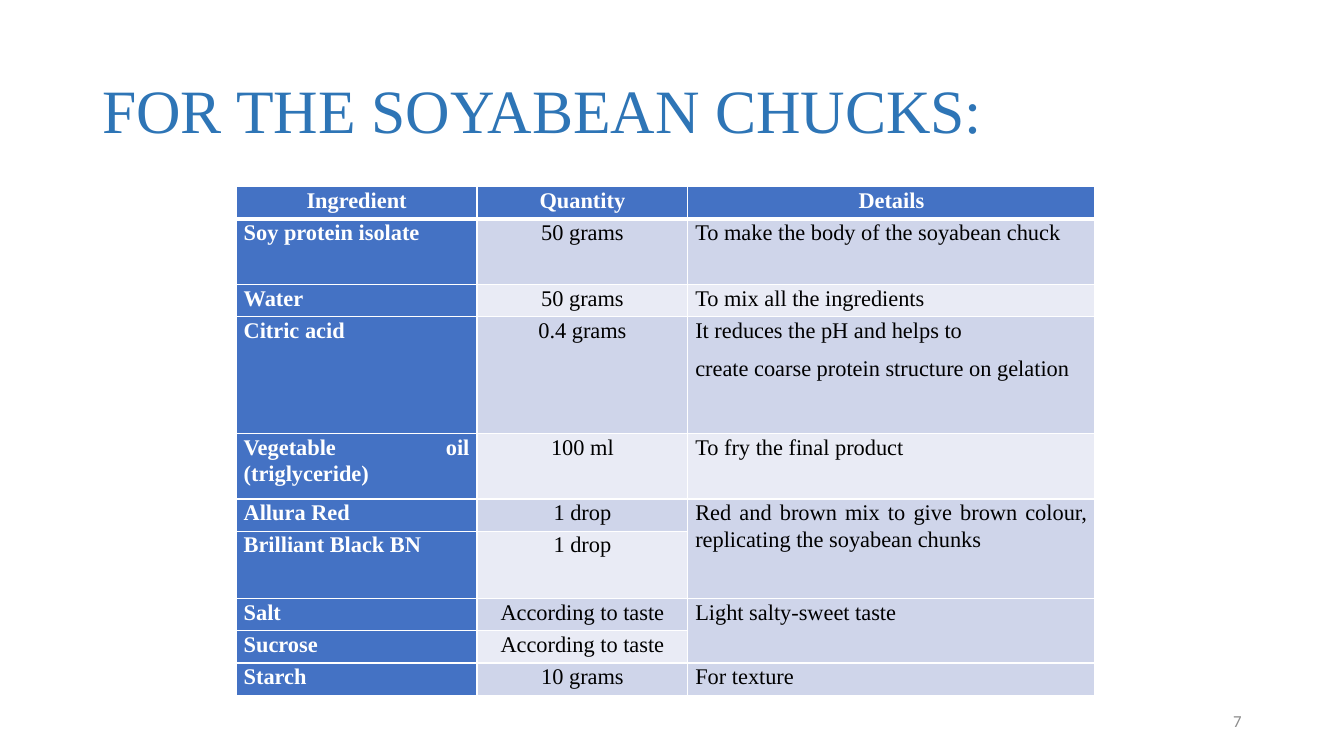
"""Build the soyabean chunk ingredients slide."""
from dataclasses import dataclass

from lxml import etree
from pptx import Presentation
from pptx.dml.color import RGBColor
from pptx.enum.text import MSO_ANCHOR, PP_ALIGN
from pptx.oxml.ns import qn
from pptx.util import Pt

LEFT, CENTER, RIGHT, JUSTIFY = PP_ALIGN.LEFT, PP_ALIGN.CENTER, PP_ALIGN.RIGHT, PP_ALIGN.JUSTIFY
MIDDLE = MSO_ANCHOR.MIDDLE
SERIF, SANS = "Times New Roman", "Calibri"
COLORS = {
    "title": "2E75B6", "number": "8C8C8C", "head": "4472C4",
    "odd": "CFD5EA", "even": "E9EBF5", "white": "FFFFFF", "black": "000000",
}
COLUMN_WIDTHS = (172.1, 150.5, 290.9)


@dataclass
class Label:
    text: str
    box: tuple[float, float, float, float]
    font: str
    size: float
    color: str
    align: PP_ALIGN
    line_spacing: float = 1.0


@dataclass
class Row:
    ingredient: str
    quantity: str
    details: str
    height: float = 23
    detail_rows: int = 1


LABELS = (
    Label("FOR THE SOYABEAN CHUCKS:", (66, 28.8, 828, 104.4), SERIF, 44, "title", LEFT, 0.9),
    Label("7", (678, 500.4, 216, 28.8), SANS, 12, "number", RIGHT),
)
ROWS = (
    Row("Ingredient", "Quantity", "Details"),
    Row("Soy protein isolate", "50 grams", "To make the body of the soyabean chuck", 46.8),
    Row("Water", "50 grams", "To mix all the ingredients"),
    Row("Citric acid", "0.4 grams",
        "It reduces the pH and helps to\ncreate coarse protein structure on gelation", 83.5),
    Row("Vegetable oil (triglyceride)", "100 ml", "To fry the final product", 46.8),
    Row("Allura Red", "1 drop",
        "Red and brown mix to give brown colour, replicating the soyabean chunks", 23, 2),
    Row("Brilliant Black BN", "1 drop", "", 48.2),
    Row("Salt", "According to taste", "Light salty-sweet taste", 23, 2),
    Row("Sucrose", "According to taste", ""),
    Row("Starch", "10 grams", "For texture"),
)


def rgb(name: str) -> RGBColor:
    """Return a named colour."""
    return RGBColor.from_string(COLORS[name])


def style(p, font: str, size: float, color: str, align: PP_ALIGN, spacing: float) -> None:
    """Set the font, alignment and line spacing of a paragraph."""
    p.font.name, p.font.size = font, Pt(size)
    p.font.color.rgb = rgb(color)
    p.alignment, p.line_spacing = align, spacing


def add_label(s, label: Label) -> None:
    """Add a vertically centred text box."""
    tf = s.shapes.add_textbox(*map(Pt, label.box)).text_frame
    tf.word_wrap, tf.vertical_anchor = True, MIDDLE
    tf.text = label.text
    style(tf.paragraphs[0], label.font, label.size, label.color, label.align, label.line_spacing)


def add_borders(cell, row: int) -> None:
    """Draw white cell borders, heavier beneath the header."""
    tc_pr = cell._tc.get_or_add_tcPr()
    widths = {"lnL": 1, "lnR": 1, "lnT": 3 if row == 1 else 1, "lnB": 3 if row == 0 else 1}
    for side, width in widths.items():
        ln = etree.SubElement(tc_pr, qn(f"a:{side}"), w=str(Pt(width)))
        fill = etree.SubElement(ln, qn("a:solidFill"))
        etree.SubElement(fill, qn("a:srgbClr"), val=COLORS["white"])


def fill_cell(cell, text: str, row: int, col: int) -> None:
    """Write and style one table cell."""
    heading = row == 0 or col == 0
    add_borders(cell, row)
    cell.fill.solid()
    cell.fill.fore_color.rgb = rgb("head" if heading else "odd" if row % 2 else "even")
    cell.margin_left = cell.margin_right = Pt(5.4)
    cell.margin_top = cell.margin_bottom = Pt(0)
    cell.text_frame.text = text
    for p in cell.text_frame.paragraphs:
        align = CENTER if row == 0 or col == 1 else JUSTIFY
        style(p, SERIF, 16, "white" if heading else "black", align, 1.07)
        p.font.bold = heading
        p.space_after = Pt(8)


def add_ingredients(s) -> None:
    """Add the ingredients table."""
    height = sum(row.height for row in ROWS)
    table = s.shapes.add_table(len(ROWS), len(COLUMN_WIDTHS), Pt(168.7), Pt(133.4),
                               Pt(sum(COLUMN_WIDTHS)), Pt(height)).table
    for column, width in zip(table.columns, COLUMN_WIDTHS):
        column.width = Pt(width)
    for i, row in enumerate(ROWS):
        table.rows[i].height = Pt(row.height)
        for j, text in enumerate((row.ingredient, row.quantity, row.details)):
            fill_cell(table.cell(i, j), text, i, j)
    for i, row in enumerate(ROWS):
        if row.detail_rows > 1:
            table.cell(i, 2).merge(table.cell(i + row.detail_rows - 1, 2))


def main() -> None:
    """Create and save the slide."""
    prs = Presentation()
    prs.slide_width, prs.slide_height = Pt(960), Pt(540)
    s = prs.slides.add_slide(prs.slide_layouts[6])
    add_ingredients(s)
    for label in LABELS:
        add_label(s, label)
    prs.save("out.pptx")


if __name__ == "__main__":
    main()
